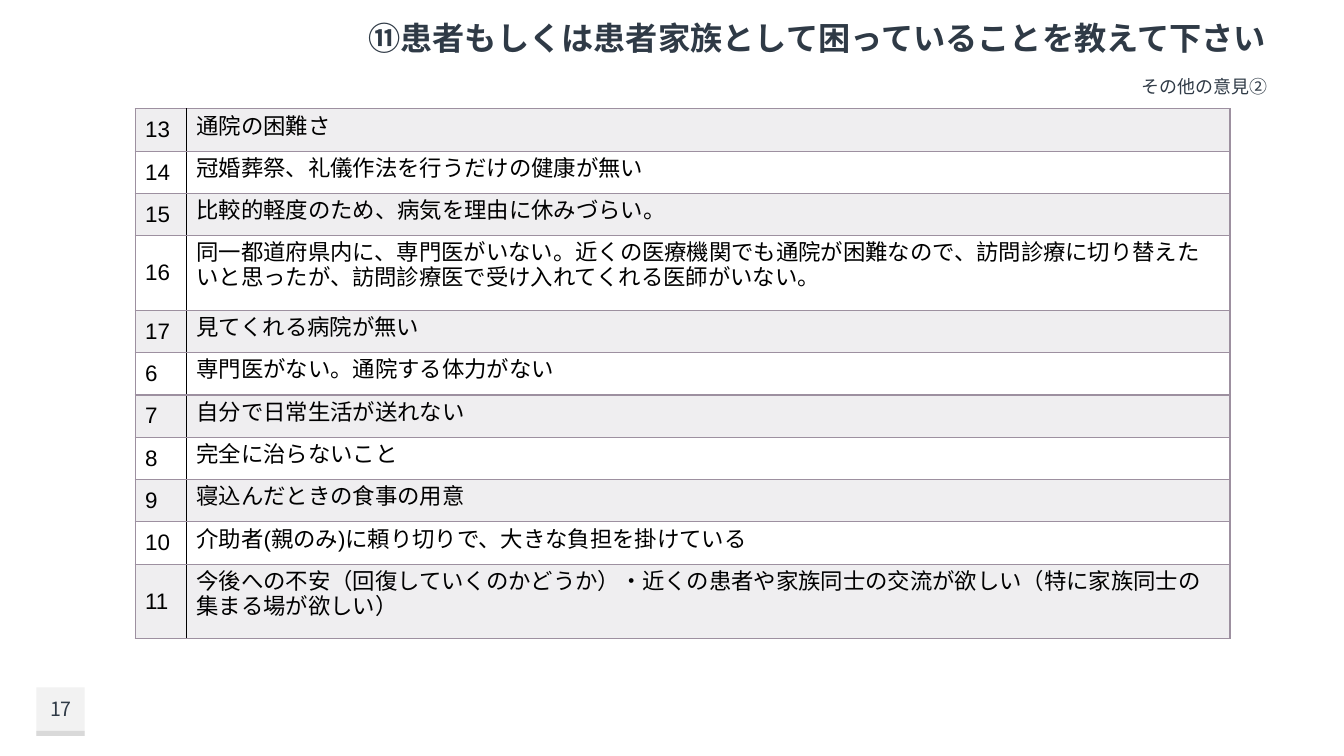
from lxml import etree
from pptx import Presentation
from pptx import util as u
from pptx.dml.color import RGBColor
from pptx.enum import shapes, text
from pptx.oxml.ns import qn

CJK = "Noto Sans CJK JP"
INK, RULE, BLACK = "2F3A46", "9D90A0", "000000"
STRIPES = ["EFEEF0", "FFFFFF"]
CHARS_PER_LINE = 45
ONE_LINE, TWO_LINES = 0.42, 0.74
OPINIONS = [
    ("13", "通院の困難さ"),
    ("14", "冠婚葬祭、礼儀作法を行うだけの健康が無い"),
    ("15", "比較的軽度のため、病気を理由に休みづらい。"),
    ("16", "同一都道府県内に、専門医がいない。近くの医療機関でも通院が困難なので、"
           "訪問診療に切り替えたいと思ったが、訪問診療医で受け入れてくれる医師がいない。"),
    ("17", "見てくれる病院が無い"),
    ("6", "専門医がない。通院する体力がない"),
    ("7", "自分で日常生活が送れない"),
    ("8", "完全に治らないこと"),
    ("9", "寝込んだときの食事の用意"),
    ("10", "介助者(親のみ)に頼り切りで、大きな負担を掛けている"),
    ("11", "今後への不安（回復していくのかどうか）・近くの患者や家族同士の交流が欲しい"
           "（特に家族同士の集まる場が欲しい）"),
]


def paint(fill, color):
    fill.solid()
    fill.fore_color.rgb = RGBColor.from_string(color)


def place(sp, x, y, w, h):
    sp.left, sp.top, sp.width, sp.height = map(u.Inches, (x, y, w, h))


def write(tf, words, size, color, align, font=CJK, bold=False, small_caps=False):
    tf.text = words
    tf.word_wrap = True
    p = tf.paragraphs[0]
    p.alignment = align
    p.font.size, p.font.bold, p.font.name = u.Pt(size), bold, font
    paint(p.font.fill, color)
    latin = p._p.find(".//" + qn("a:latin"))
    east_asian = etree.Element(qn("a:ea"), typeface=font)
    latin.addnext(east_asian)
    if small_caps:
        latin.getparent().set("cap", "small")


def add_heading(sp, words, size, bold, x, y, w, h):
    place(sp, x, y, w, h)
    tf = sp.text_frame
    write(tf, words, size, INK, text.PP_ALIGN.RIGHT, bold=bold, small_caps=True)
    tf.auto_size = text.MSO_AUTO_SIZE.NONE
    tf.vertical_anchor = text.MSO_ANCHOR.MIDDLE


def add_page_number(s, number, x, y, size):
    """Draw a square badge with a darker strip along its foot."""
    strip = 0.05
    for top, height, color in ((y, size, "F2F2F2"),
                               (y + size - strip, strip, "D9D9D9")):
        sp = s.shapes.add_shape(shapes.MSO_SHAPE.RECTANGLE, 0, 0, 0, 0)
        place(sp, x, top, size, height)
        sp.shadow.inherit = False
        sp.line.fill.background()
        paint(sp.fill, color)
    box = s.shapes.add_textbox(0, 0, 0, 0)
    place(box, x - 0.07, y, size + 0.15, size - strip)
    write(box.text_frame, number, 14, INK, text.PP_ALIGN.CENTER)
    box.text_frame.vertical_anchor = text.MSO_ANCHOR.MIDDLE


def add_borders(cell, **colors):
    tcPr = cell._tc.get_or_add_tcPr()
    for side in "LRTB":
        ln = etree.SubElement(tcPr, qn(f"a:ln{side}"), w=str(u.Pt(1)))
        fill = etree.SubElement(ln, qn("a:solidFill"))
        etree.SubElement(fill, qn("a:srgbClr"), val=colors.get(side, RULE))


def add_opinions(s, x, y, w, number_width):
    """Fill a table whose rows are as tall as their one or two lines need."""
    heights = [TWO_LINES if len(words) > CHARS_PER_LINE else ONE_LINE
               for _, words in OPINIONS]
    table = s.shapes.add_table(len(OPINIONS), 2,
                               *map(u.Inches, (x, y, w, sum(heights)))).table
    table.first_row = table.horz_banding = False
    table.columns[0].width = u.Inches(number_width)
    table.columns[1].width = u.Inches(w - number_width)
    for i, opinion in enumerate(OPINIONS):
        table.rows[i].height = u.Inches(heights[i])
        for j, words in enumerate(opinion):
            cell = table.cell(i, j)
            add_borders(cell, **{"RL"[j]: BLACK})
            paint(cell.fill, STRIPES[i % 2])
            write(cell.text_frame, words, 16, BLACK, text.PP_ALIGN.LEFT, font="Arial")
        table.cell(i, 0).vertical_anchor = text.MSO_ANCHOR.MIDDLE


def main():
    prs = Presentation()
    prs.slide_width, prs.slide_height = u.Inches(13.33), u.Inches(7.5)
    s = prs.slides.add_slide(prs.slide_layouts[0])
    add_heading(s.placeholders[1], "その他の意見②", 16, False, 2.18, 0.68, 10.49, 0.31)
    add_heading(s.shapes.title, "⑪患者もしくは患者家族として困っていることを教えて下さい",
                28.8, True, 2.18, 0, 10.49, 0.68)
    add_page_number(s, "17", 0.36, 6.82, 0.48)
    add_opinions(s, 1.34, 1.08, 10.86, number_width=0.51)
    prs.save("out.pptx")


if __name__ == "__main__":
    main()
